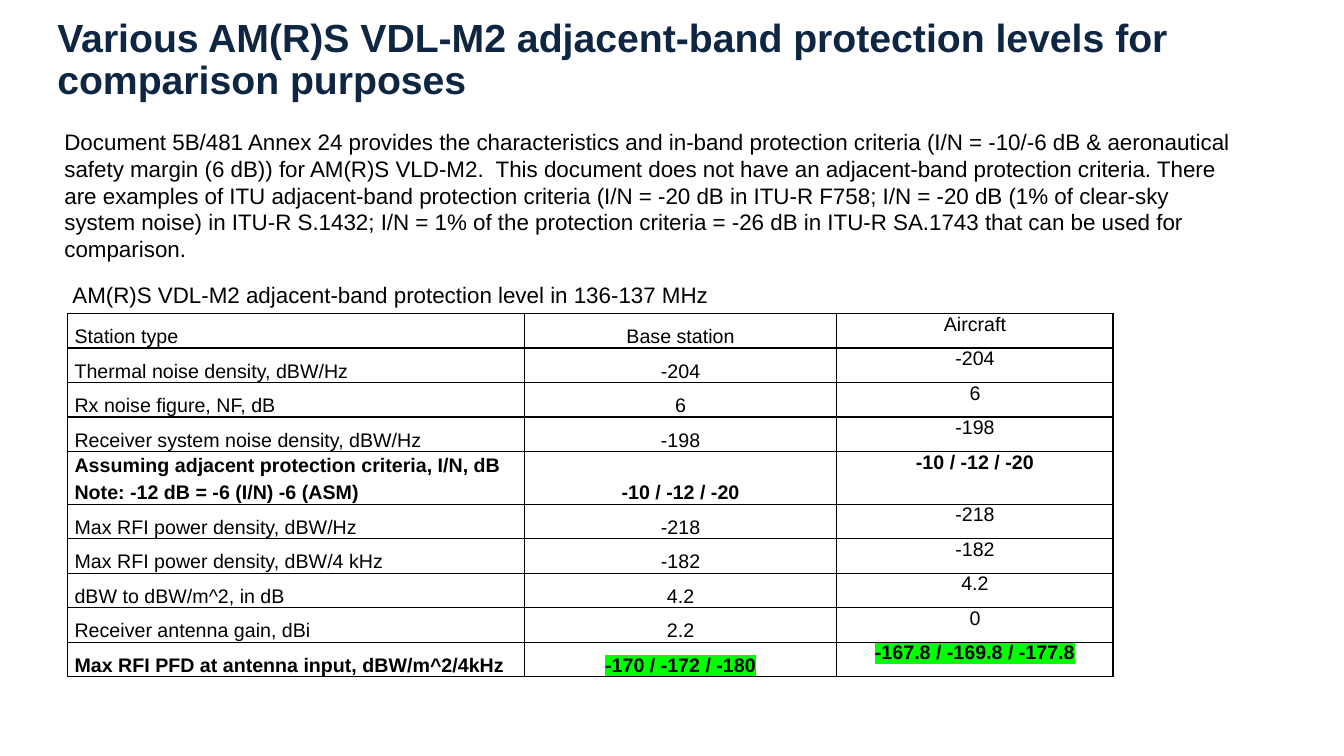
from lxml import etree
from pptx import Presentation
from pptx import util as u
from pptx.dml.color import RGBColor
from pptx.enum import text
from pptx.oxml import ns

FONT = "Arial"
BLACK, NAVY, GREEN = "000000", "0E2641", "00FF00"

TITLE = "Various AM(R)S VDL-M2 adjacent-band protection levels for comparison purposes"
INTRO = (
    "Document 5B/481 Annex 24 provides the characteristics and in-band protection criteria "
    "(I/N = -10/-6 dB & aeronautical safety margin (6 dB)) for AM(R)S VLD-M2.  This document "
    "does not have an adjacent-band protection criteria. There are examples of ITU adjacent-band "
    "protection criteria (I/N = -20 dB in ITU-R F758; I/N = -20 dB (1% of clear-sky system noise) "
    "in ITU-R S.1432; I/N = 1% of the protection criteria = -26 dB in ITU-R SA.1743 that can be "
    "used for comparison."
)
CAPTION = "AM(R)S VDL-M2 adjacent-band protection level in 136-137 MHz"

# Parameter, base station, aircraft
LEVELS = [
    ("Station type", "Base station", "Aircraft"),
    ("Thermal noise density, dBW/Hz", "-204", "-204"),
    ("Rx noise figure, NF, dB", "6", "6"),
    ("Receiver system noise density, dBW/Hz", "-198", "-198"),
    ("Assuming adjacent protection criteria, I/N, dB\nNote: -12 dB = -6 (I/N) -6 (ASM)",
     "-10 / -12 / -20", "-10 / -12 / -20"),
    ("Max RFI power density, dBW/Hz", "-218", "-218"),
    ("Max RFI power density, dBW/4 kHz", "-182", "-182"),
    ("dBW to dBW/m^2, in dB", "4.2", "4.2"),
    ("Receiver antenna gain, dBi", "2.2", "0"),
    ("Max RFI PFD at antenna input, dBW/m^2/4kHz",
     "-170 / -172 / -180", "-167.8 / -169.8 / -177.8"),
]
CRITERIA_ROW, RESULT_ROW = 4, 9
COLUMN_WIDTHS = (4.53, 3.1, 2.74)
CRITERIA_HEIGHT = 0.52


def rgb(value):
    return RGBColor.from_string(value)


def write(paragraph, wording, size, color=BLACK, bold=False):
    run = paragraph.add_run()
    run.text = wording
    for name, value in {"name": FONT, "size": u.Pt(size), "bold": bold}.items():
        setattr(run.font, name, value)
    run.font.color.rgb = rgb(color)
    return run


def highlight(run, color):
    fill = run.font._element.find(ns.qn("a:solidFill"))
    marker = etree.Element(ns.qn("a:highlight"))
    etree.SubElement(marker, ns.qn("a:srgbClr"), val=color)
    fill.addnext(marker)


def add_borders(cell, color, width):
    properties = cell._tc.get_or_add_tcPr()
    for index, side in enumerate(("lnL", "lnR", "lnT", "lnB")):
        line = etree.Element(ns.qn("a:" + side), w=str(u.Pt(width)))
        fill = etree.SubElement(line, ns.qn("a:solidFill"))
        etree.SubElement(fill, ns.qn("a:srgbClr"), val=color)
        properties.insert(index, line)


def add_passage(slide, box, wording, size, color=BLACK, bold=False,
                anchor=text.MSO_ANCHOR.TOP, spacing=None):
    frame = slide.shapes.add_textbox(*map(u.Inches, box)).text_frame
    frame.word_wrap = True
    frame.vertical_anchor = anchor
    paragraph = frame.paragraphs[0]
    paragraph.line_spacing = spacing
    write(paragraph, wording, size, color, bold)


def fill_cell(cell, wording, row, column):
    layout = {
        "margin_left": u.Inches(0.07), "margin_right": u.Inches(0.07),
        "margin_top": 0, "margin_bottom": 0,
        "vertical_anchor": text.MSO_ANCHOR.TOP if column == 2 else text.MSO_ANCHOR.BOTTOM,
    }
    for name, value in layout.items():
        setattr(cell, name, value)
    cell.fill.background()
    add_borders(cell, BLACK, 1)

    frame = cell.text_frame
    for index, line in enumerate(wording.split("\n")):
        paragraph = frame.add_paragraph() if index else frame.paragraphs[0]
        paragraph.alignment = text.PP_ALIGN.CENTER if column else text.PP_ALIGN.LEFT
        paragraph.space_before = paragraph.space_after = u.Pt(2)
        run = write(paragraph, line, 14, bold=row in (CRITERIA_ROW, RESULT_ROW))
        if row == RESULT_ROW and column:
            highlight(run, GREEN)


def add_levels_table(slide, box):
    table = slide.shapes.add_table(
        len(LEVELS), len(COLUMN_WIDTHS), *map(u.Inches, box)).table
    table.first_row = table.horz_banding = False
    for column, width in zip(table.columns, COLUMN_WIDTHS):
        column.width = u.Inches(width)
    plain_height = (box[3] - CRITERIA_HEIGHT) / (len(LEVELS) - 1)
    for row, entries in enumerate(LEVELS):
        height = CRITERIA_HEIGHT if row == CRITERIA_ROW else plain_height
        table.rows[row].height = u.Inches(height)
        for column, wording in enumerate(entries):
            fill_cell(table.cell(row, column), wording, row, column)


def main():
    deck = Presentation()
    deck.slide_width, deck.slide_height = u.Inches(13.33), u.Inches(7.5)
    slide = deck.slides.add_slide(deck.slide_layouts[6])

    # Title and introduction
    add_passage(slide, (0.47, 0.21, 12.4, 0.86), TITLE, 28, NAVY, bold=True,
                anchor=text.MSO_ANCHOR.BOTTOM, spacing=0.9)
    add_passage(slide, (0.54, 1.22, 11.88, 1.45), INTRO, 16)

    # Captioned table
    add_passage(slide, (0.62, 2.74, 8.75, 0.37), CAPTION, 16)
    add_levels_table(slide, (0.67, 3.11, sum(COLUMN_WIDTHS), 3.6))

    deck.save("out.pptx")


if __name__ == "__main__":
    main()
